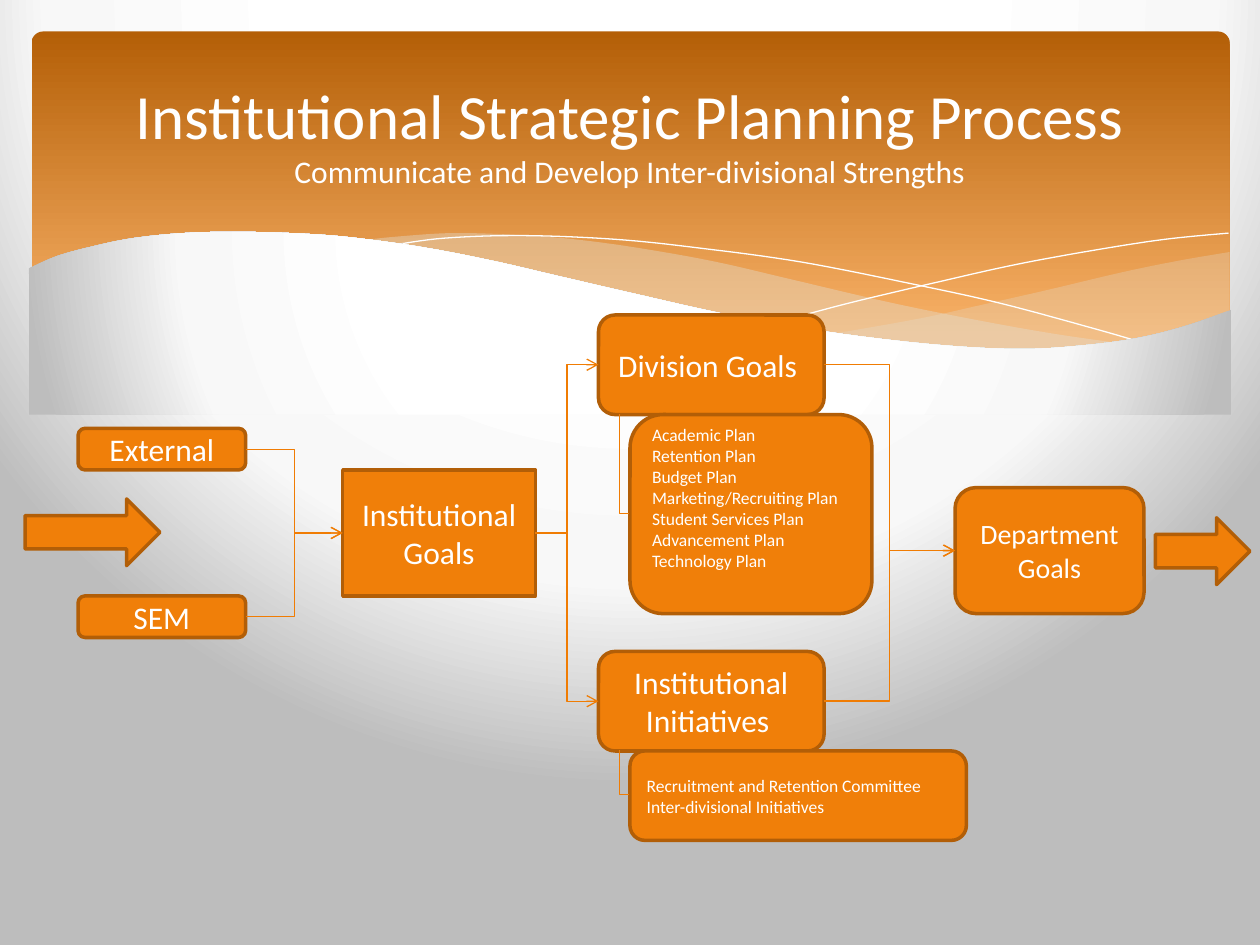
from dataclasses import dataclass

from lxml import etree
from pptx import Presentation
from pptx.dml.color import RGBColor
from pptx.enum.shapes import MSO_CONNECTOR, MSO_SHAPE
from pptx.enum.text import MSO_ANCHOR, PP_ALIGN
from pptx.oxml import parse_xml
from pptx.oxml.ns import nsdecls, qn
from pptx.util import Inches, Pt

ROUNDED, RECT, ARROW = MSO_SHAPE.ROUNDED_RECTANGLE, MSO_SHAPE.RECTANGLE, MSO_SHAPE.RIGHT_ARROW
ELBOW = MSO_CONNECTOR.ELBOW
LEFT, CENTER = PP_ALIGN.LEFT, PP_ALIGN.CENTER
TOP, MIDDLE = MSO_ANCHOR.TOP, MSO_ANCHOR.MIDDLE
LEFT_SITE, RIGHT_SITE = 1, 3


@dataclass(frozen=True)
class Theme:
    font: str = "Calibri"
    white: RGBColor = RGBColor(0xFF, 0xFF, 0xFF)
    box: RGBColor = RGBColor(0xF0, 0x7F, 0x09)
    border: RGBColor = RGBColor(0xB2, 0x5E, 0x07)
    link: RGBColor = RGBColor(0xF0, 0x7C, 0x03)
    veil: RGBColor = RGBColor(0xE3, 0xDE, 0xD1)
    header_top: RGBColor = RGBColor(0xB4, 0x5F, 0x07)
    header_bottom: RGBColor = RGBColor(0xF9, 0xB2, 0x68)
    backdrop: tuple = ((40, "FFFFFF"), (74, "F8F8F8"), (100, "BDBDBD"))
    title: int = 36
    body: int = 18
    department: int = 16
    detail: int = 10


theme = Theme()
prs = Presentation()
prs.slide_width, prs.slide_height = Inches(10), Inches(7.5)
slide = prs.slides.add_slide(prs.slide_layouts[6])


def put_text(shape, lines, sizes, align=CENTER, anchor=MIDDLE):
    frame = shape.text_frame
    frame.word_wrap = True
    frame.vertical_anchor = anchor
    for index, line in enumerate(lines):
        paragraph = frame.paragraphs[0] if index == 0 else frame.add_paragraph()
        paragraph.alignment = align
        run = paragraph.add_run()
        run.text = line
        run.font.name = theme.font
        run.font.size = Pt(sizes[min(index, len(sizes) - 1)])
        run.font.color.rgb = theme.white


def draw_wave(edges, closed=True, steps=8):
    outline = []
    for edge in edges:
        padded = [edge[0], *edge, edge[-1]]
        outline.append(edge[0])
        for a, b, c, d in zip(padded, padded[1:], padded[2:], padded[3:]):
            for step in range(1, steps + 1):
                t = step / steps
                outline.append(tuple(
                    (2 * q + (r - p) * t + (2 * p - 5 * q + 4 * r - s) * t**2
                     + (3 * q - p - 3 * r + s) * t**3) / 2
                    for p, q, r, s in zip(a, b, c, d)))
    points = [(Inches(x), Inches(y)) for x, y in outline]
    builder = slide.shapes.build_freeform(*points[0])
    builder.add_line_segments(points[1:], close=closed)
    wave = builder.convert_to_shape()
    wave.shadow.inherit = False
    return wave


header = slide.shapes.add_shape(ROUNDED, Inches(0.25), Inches(0.25), Inches(9.51), Inches(2.7))
header.shadow.inherit = False
header.adjustments[0] = 0.034
header.line.fill.background()
header.fill.gradient()
header.fill.gradient_angle = 270
for stop, position, color in zip(header.fill.gradient_stops, (0, 0.9),
                                 (theme.header_top, theme.header_bottom)):
    stop.position = position
    stop.color.rgb = color

right_veil = [
    [(9.76, 2), (9.35, 2.07), (8.91, 2.16), (8.32, 2.3), (7.79, 2.42), (7.29, 2.53), (6.61, 2.65)],
    [(6.61, 2.65), (7.05, 2.71), (7.57, 2.76), (8.14, 2.78), (8.63, 2.75), (9.05, 2.69),
     (9.42, 2.59), (9.76, 2.47)],
]
center_veil = [
    [(8.93, 2.73), (8.37, 2.65), (7.75, 2.54), (7.06, 2.4), (6.29, 2.22), (5.69, 2.08),
     (5.14, 1.98), (4.65, 1.91), (4.2, 1.87), (3.61, 1.85), (3.13, 1.88), (2.86, 1.91)],
    [(2.86, 1.91), (3.42, 1.99), (4.04, 2.11), (4.49, 2.22), (5.3, 2.4), (6.01, 2.55),
     (6.65, 2.66), (7.22, 2.74), (7.73, 2.77), (8.28, 2.78), (8.93, 2.73)],
]
for edges, opacity in ((right_veil, 29), (center_veil, 40)):
    veil = draw_wave(edges)
    veil.line.fill.background()
    veil.fill.solid()
    veil.fill.fore_color.rgb = theme.veil
    veil_color = veil.element.spPr.find(f"{qn('a:solidFill')}/{qn('a:srgbClr')}")
    etree.SubElement(veil_color, qn("a:alpha")).set("val", str(opacity * 1000))

falling_strand = [(3.09, 1.95), (3.53, 1.89), (4.16, 1.87), (4.89, 1.9), (5.56, 1.97),
                  (6.36, 2.08), (7.27, 2.26), (7.95, 2.41), (8.69, 2.61), (9.07, 2.72)]
rising_strand = [(6.13, 2.57), (6.72, 2.41), (7.48, 2.23), (8.06, 2.1), (8.66, 1.99),
                 (9.24, 1.9), (9.75, 1.85)]
for edge in (falling_strand, rising_strand):
    strand = draw_wave([edge], closed=False)
    strand.fill.background()
    strand.line.color.rgb = theme.white
    strand.line.width = Pt(0)

cover = draw_wave([
    [(9.77, 2.46), (9.4, 2.59), (8.99, 2.69), (8.5, 2.75), (8.09, 2.77), (7.61, 2.75),
     (7.08, 2.7), (6.48, 2.62), (5.79, 2.5), (5.03, 2.33), (4.47, 2.2), (3.91, 2.07),
     (3.4, 1.97), (2.92, 1.9), (2.5, 1.86), (1.93, 1.84), (1.46, 1.85), (1.06, 1.89),
     (0.76, 1.95), (0.46, 2.03), (0.23, 2.13)],
    [(0.23, 3.29), (9.77, 3.29)],
])
cover.line.fill.background()
cover.fill.solid()
slide.background.fill.solid()
stops = "".join(f'<a:gs pos="{position * 1000}"><a:srgbClr val="{color}"/></a:gs>'
                for position, color in theme.backdrop)
for owner in (cover.element.spPr, slide.element.find(f".//{qn('p:bgPr')}")):
    owner.replace(owner.find(qn("a:solidFill")), parse_xml(
        f'<a:gradFill {nsdecls("a")} rotWithShape="1"><a:gsLst>{stops}</a:gsLst>'
        '<a:path path="circle"><a:fillToRect l="20000" t="-40000" r="20000" b="140000"/>'
        '</a:path></a:gradFill>'))

title = slide.shapes.add_textbox(Inches(0.5), Inches(0.37), Inches(9), Inches(1.37))
put_text(title, ["Institutional Strategic Planning Process",
                 "Communicate and Develop Inter-divisional Strengths"],
         (theme.title, theme.body))

plans = ["Academic Plan", "Retention Plan", "Budget Plan", "Marketing/Recruiting Plan",
         "Student Services Plan", "Advancement Plan", "Technology Plan"]
committees = ["Recruitment and Retention Committee", "Inter-divisional Initiatives"]
steps = {
    "external": (ROUNDED, 0.62, 3.4, 1.33, 0.33, ["External"], theme.body, CENTER),
    "sem": (ROUNDED, 0.62, 4.73, 1.33, 0.33, ["SEM"], theme.body, CENTER),
    "goals": (RECT, 2.72, 3.73, 1.53, 1, ["Institutional Goals"], theme.body, CENTER),
    "initiatives": (ROUNDED, 4.75, 5.17, 1.79, 0.79, ["Institutional Initiatives "],
                    theme.body, CENTER),
    "division": (ROUNDED, 4.75, 2.5, 1.79, 0.79, ["Division Goals "], theme.body, CENTER),
    "department": (ROUNDED, 7.58, 3.87, 1.5, 1, ["Department Goals"], theme.department, CENTER),
    "plans": (ROUNDED, 5, 3.29, 1.92, 1.58, plans, theme.detail, LEFT),
    "output": (ARROW, 9.17, 4.11, 0.75, 0.53, [], theme.body, CENTER),
    "input": (ARROW, 0.2, 3.96, 1.07, 0.53, [], theme.body, CENTER),
    "committees": (ROUNDED, 5, 5.96, 2.67, 0.71, committees, theme.detail, LEFT),
}
boxes = {}
for key, (outline, left, top, width, height, lines, size, align) in steps.items():
    box = slide.shapes.add_shape(outline, Inches(left), Inches(top), Inches(width), Inches(height))
    box.shadow.inherit = False
    box.fill.solid()
    box.fill.fore_color.rgb = theme.box
    box.line.color.rgb = theme.border
    box.line.width = Pt(2)
    put_text(box, lines, (size,), align=align, anchor=TOP if key == "plans" else MIDDLE)
    boxes[key] = box
boxes["plans"].text_frame.margin_top = 0

flows = []
for source, target in (("external", "goals"), ("sem", "goals"), ("goals", "division"),
                       ("goals", "initiatives"), ("division", "department"),
                       ("initiatives", "department")):
    flow = slide.shapes.add_connector(ELBOW, 0, 0, 0, 0)
    flow.begin_connect(boxes[source], RIGHT_SITE)
    flow.end_connect(boxes[target], LEFT_SITE)
    flows.append(flow)

branches = []
for left, top, length in ((4.56, 3.64, 0.79), (4.78, 6.09, 0.35)):
    branch = slide.shapes.add_connector(ELBOW, Inches(left + length), Inches(top),
                                        Inches(left), Inches(top + 0.08))
    branch.element.spPr.find(qn("a:xfrm")).set("rot", str(270 * 60000))
    branch.element.spPr.find(qn("a:prstGeom")).set("prst", "bentConnector2")
    branches.append(branch)

for link in flows + branches:
    link.line.color.rgb = theme.link
    link.line.width = Pt(0.75)
    if link in flows:
        stroke = link.element.spPr.find(qn("a:ln"))
        etree.SubElement(stroke, qn("a:tailEnd")).set("type", "arrow")
    etree.SubElement(link.element.spPr, qn("a:effectLst"))

prs.save("out.pptx")
